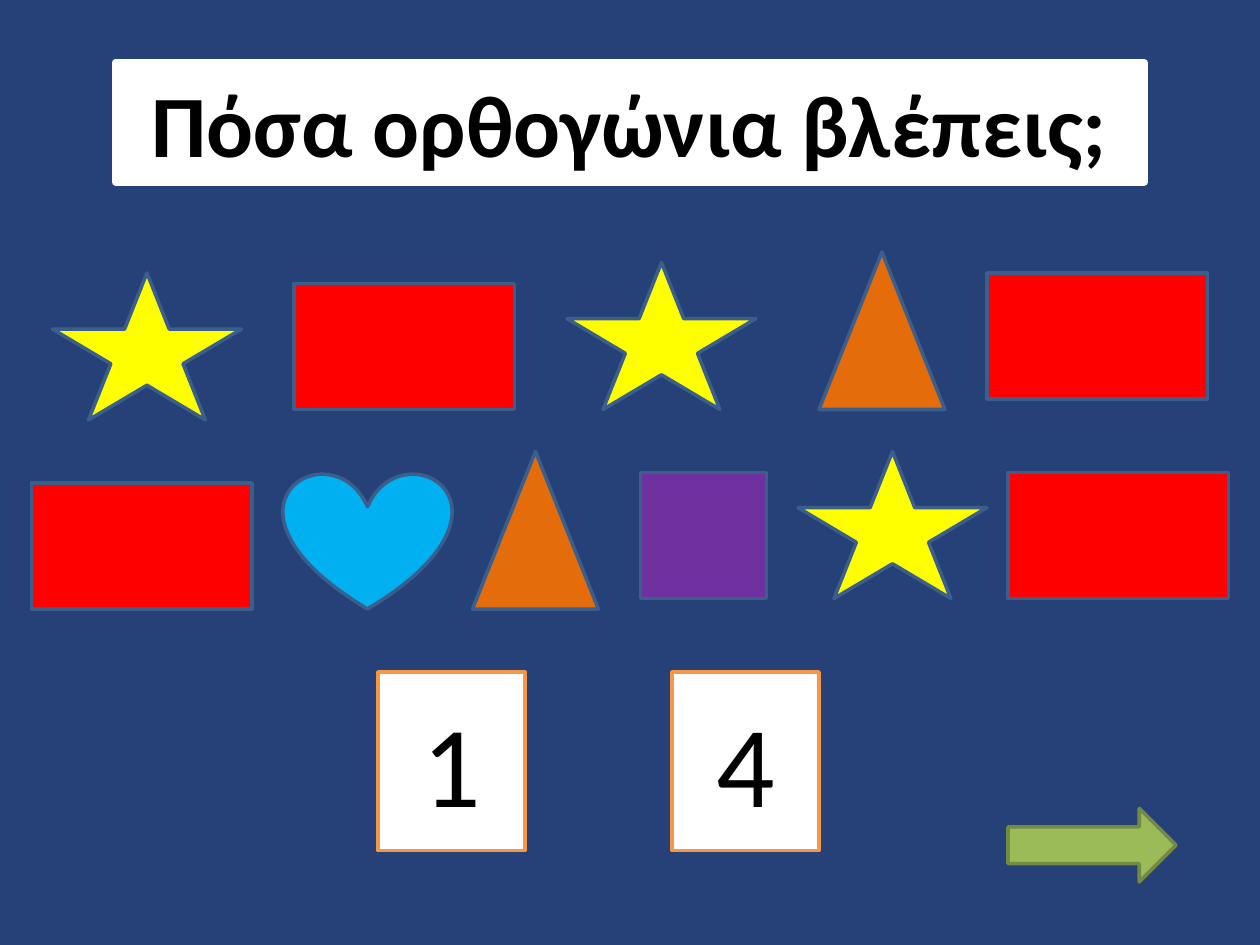
from pptx import Presentation
from pptx.dml.color import RGBColor
from pptx.enum.shapes import MSO_SHAPE as Shape
from pptx.enum.text import MSO_ANCHOR as Anchor, MSO_AUTO_SIZE as AutoSize, PP_ALIGN as Align
from pptx.util import Pt

EMU_PER_PX = 7620

COLORS = {
    "background": "264178",
    "white": "FFFFFF",
    "black": "000000",
    "yellow": "FFFF00",
    "orange": "E46C0A",
    "purple": "7030A0",
    "blue": "00B0F0",
    "red": "FF0000",
    "green": "9BBB59",
    "figure_line": "3A5F8C",
    "answer_line": "F79646",
    "arrow_line": "738A42",
}

FIGURES = {
    "star": (Shape.STAR_5_POINT, 180, 140, "yellow"),
    "triangle": (Shape.ISOSCELES_TRIANGLE, 120, 150, "orange"),
    "square": (Shape.RECTANGLE, 120, 120, "purple"),
    "heart": (Shape.HEART, 160, 130, "blue"),
    "rectangle": (Shape.RECTANGLE, 210, 120, "red"),
}

FIRST_ROW = [
    ("star", 20, 20), ("rectangle", 250, 30), ("star", 510, 10),
    ("triangle", 750, 0), ("rectangle", 910, 20),
]
SECOND_ROW = [
    ("rectangle", 0, 30), ("heart", 240, 20), ("triangle", 420, 0),
    ("square", 580, 20), ("star", 730, 0), ("rectangle", 930, 20),
]


def px(length):
    """Turn a length in px into EMU."""
    return length * EMU_PER_PX


def color(name):
    """Return the named colour."""
    return RGBColor.from_string(COLORS[name])


def paint(shape, fill, line, line_width=2):
    """Give a shape its solid fill and outline."""
    shape.fill.solid()
    shape.fill.fore_color.rgb = color(fill)
    shape.line.color.rgb = color(line)
    shape.line.width = Pt(line_width)


def write(shape, text, size, bold=False):
    """Put one centred black line of text in a shape."""
    text_frame = shape.text_frame
    text_frame.text = text
    text_frame.vertical_anchor = Anchor.MIDDLE
    paragraph = text_frame.paragraphs[0]
    paragraph.alignment = Align.CENTER
    font = paragraph.runs[0].font
    font.name, font.size, font.bold = "Calibri", Pt(size), bold
    font.color.rgb = color("black")


def add_figure(slide, kind, left, top, width, height, fill, line):
    """Add one painted preset shape."""
    shape = slide.shapes.add_shape(kind, px(left), px(top), px(width), px(height))
    shape.shadow.inherit = False
    paint(shape, fill, line)
    return shape


def place_question(slide, left, top, width, height):
    """Place the question in the title placeholder."""
    title = slide.shapes.title
    title.left, title.top, title.width, title.height = map(px, (left, top, width, height))
    paint(title, "white", "white", 4.5)
    write(title, "Πόσα ορθογώνια βλέπεις;", 50, True)
    title.text_frame.auto_size = AutoSize.NONE


def place_row(slide, left, top, row):
    """Place a row of figures relative to its corner."""
    for name, x, y in row:
        kind, width, height, fill = FIGURES[name]
        add_figure(slide, kind, left + x, top + y, width, height, fill, "figure_line")


def place_answers(slide, left, top, answers):
    """Place the answer cards side by side."""
    for index, answer in enumerate(answers):
        card = add_figure(slide, Shape.RECTANGLE, left + 280 * index, top,
                          140, 170, "white", "answer_line")
        write(card, answer, 66)


def main():
    """Build and save the counting slide."""
    presentation = Presentation()
    presentation.slide_width, presentation.slide_height = px(1200), px(900)
    slide = presentation.slides.add_slide(presentation.slide_layouts[5])
    background = slide.background.fill
    background.solid()
    background.fore_color.rgb = color("background")
    place_question(slide, 110, 60, 980, 113)
    place_row(slide, 30, 240, FIRST_ROW)
    place_row(slide, 30, 430, SECOND_ROW)
    place_answers(slide, 360, 640, ["1", "4"])
    add_figure(slide, Shape.RIGHT_ARROW, 960, 770, 160, 70, "green", "arrow_line")
    presentation.save("out.pptx")


if __name__ == "__main__":
    main()
